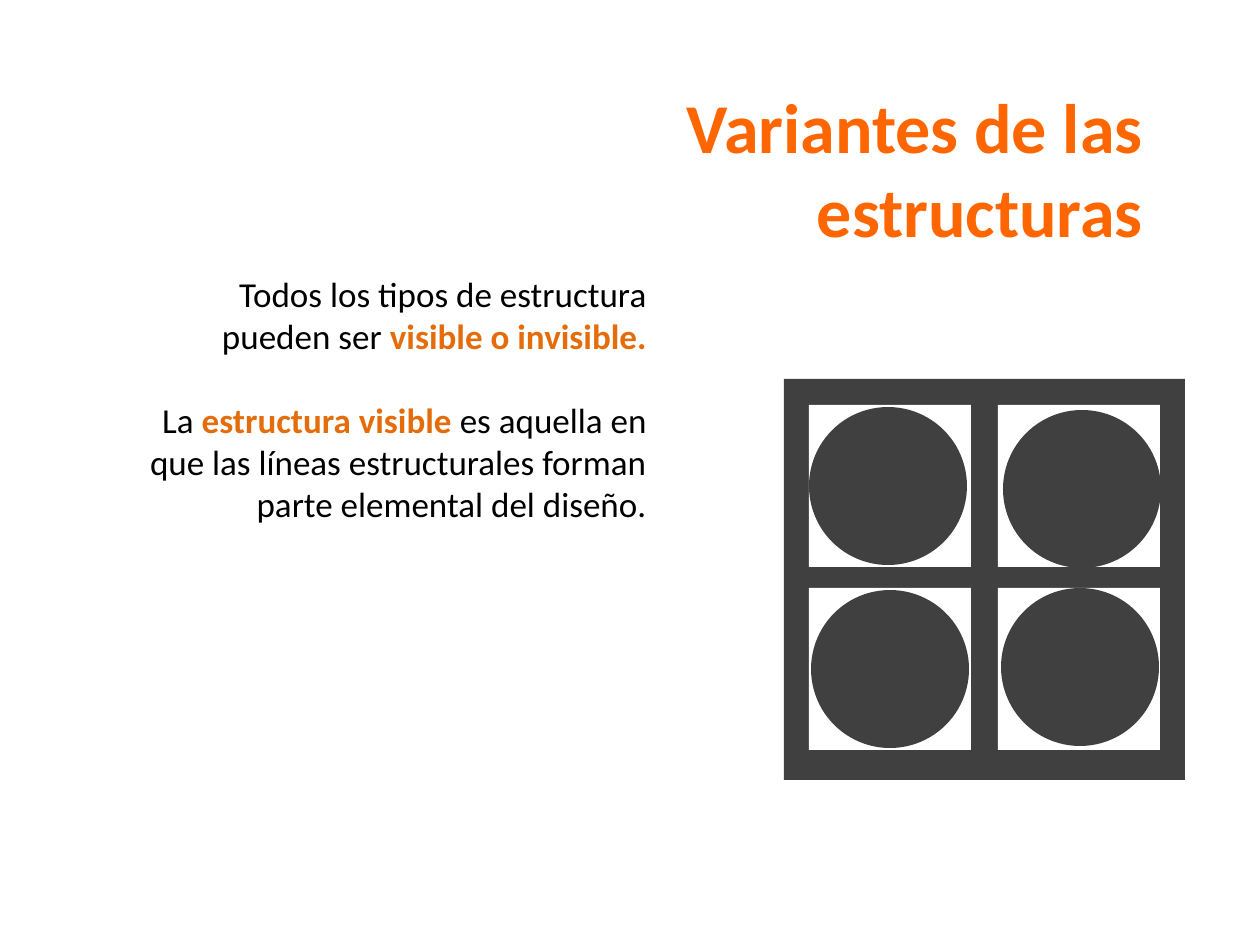
from itertools import product

from pptx import Presentation
from pptx.dml.color import RGBColor
from pptx.enum.shapes import MSO_SHAPE as Shape
from pptx.enum.text import MSO_ANCHOR as Anchor, PP_ALIGN as Align
from pptx.util import Emu, Pt

PX_PER_INCH = 126
FONT = "Calibri"
BLACK = RGBColor(0x00, 0x00, 0x00)
WHITE = RGBColor(0xFF, 0xFF, 0xFF)
GRAY = RGBColor(0x40, 0x40, 0x40)
ORANGE = RGBColor(0xFF, 0x66, 0x00)
DARK_ORANGE = RGBColor(0xE4, 0x6C, 0x0A)

TITLE = [[("Variantes de las estructuras", ORANGE, True)]]
BODY = [
    [("Todos los tipos de estructura pueden ser ", BLACK, False),
     ("visible o invisible.", DARK_ORANGE, True)],
    [("La ", BLACK, False),
     ("estructura visible ", DARK_ORANGE, True),
     ("es aquella en que las líneas estructurales forman parte elemental del diseño.",
      BLACK, False)],
]

WINDOW_LEFTS, WINDOW_TOPS, WINDOW_SIZE = (809, 998), (405, 588), 162
CIRCLE_CORNERS = [(811, 590), (1001, 588), (1003, 410), (809, 407)]
CIRCLE_SIZE = 158


def px(length):
    return Emu(length * 914400 // PX_PER_INCH)


def add_text(page, left, top, width, height, paragraphs, size, gap=0):
    """Add right-aligned paragraphs of (text, colour, bold) spans, gap points apart."""
    box = page.shapes.add_textbox(px(left), px(top), px(width), px(height))
    frame = box.text_frame
    frame.word_wrap = True
    frame.vertical_anchor = Anchor.TOP
    for index, spans in enumerate(paragraphs):
        para = frame.add_paragraph() if index else frame.paragraphs[0]
        para.alignment = Align.RIGHT
        if index:
            para.space_before = Pt(gap)
        for text, color, bold in spans:
            span = para.add_run()
            span.text = text
            span.font.name = FONT
            span.font.size = Pt(size)
            span.font.bold = bold
            span.font.color.rgb = color


def add_filled(page, kind, left, top, size, color):
    """Add a square or circle without outline."""
    shape = page.shapes.add_shape(kind, px(left), px(top), px(size), px(size))
    shape.shadow.inherit = False
    shape.fill.solid()
    shape.fill.fore_color.rgb = color
    shape.line.fill.background()


def add_structure(page):
    add_filled(page, Shape.RECTANGLE, 784, 379, 401, GRAY)
    for left, top in product(WINDOW_LEFTS, WINDOW_TOPS):
        add_filled(page, Shape.RECTANGLE, left, top, WINDOW_SIZE, WHITE)
    for left, top in CIRCLE_CORNERS:
        add_filled(page, Shape.OVAL, left, top, CIRCLE_SIZE, GRAY)


def main():
    deck = Presentation()
    deck.slide_width, deck.slide_height = px(1260), px(945)
    page = deck.slides.add_slide(deck.slide_layouts[6])
    add_text(page, 123, 266, 536, 564, BODY, size=20, gap=24)
    add_text(page, 451, 77, 704, 183, TITLE, size=40)
    add_structure(page)
    deck.save("out.pptx")


if __name__ == "__main__":
    main()
